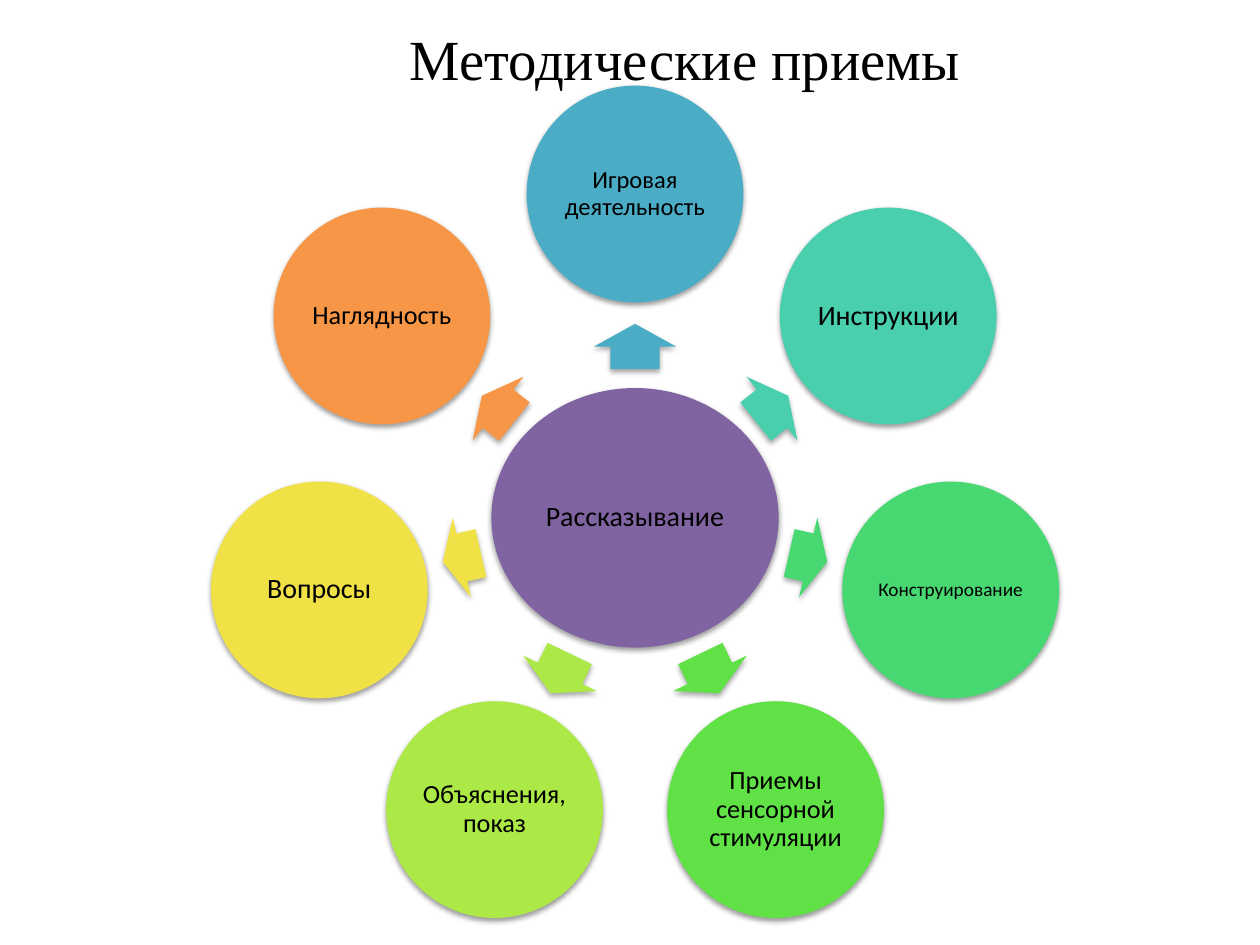
import math

from lxml import etree
from pptx import Presentation
from pptx.dml.color import RGBColor
from pptx.enum.shapes import MSO_SHAPE
from pptx.enum.text import MSO_ANCHOR, PP_ALIGN
from pptx.oxml.ns import qn
from pptx.util import Inches, Pt

OVAL = MSO_SHAPE.OVAL
ARROW = MSO_SHAPE.RIGHT_ARROW
CENTER = PP_ALIGN.CENTER
MIDDLE = MSO_ANCHOR.MIDDLE

COLORS = {
    "text": "000000", "hub": "8064A2", "blue": "4BACC6", "teal": "49CFAE",
    "emerald": "47D872", "green": "60E146", "lime": "ACE946",
    "yellow": "F0E146", "orange": "F79646",
}

# Ring geometry in inches
CX, CY = 5.04, 4.11
RING_RADIUS = 2.57
CIRCLE_SIZE = 1.72
ARROW_WIDTH = 0.65

# Text, size, colour; clockwise from the top
METHODS = [
    ("Игровая деятельность", 14, "blue"),
    ("Инструкции", 16, "teal"),
    ("Конструирование", 11, "emerald"),
    ("Приемы сенсорной стимуляции", 15, "green"),
    ("Объяснения, показ", 15, "lime"),
    ("Вопросы", 16, "yellow"),
    ("Наглядность", 15, "orange"),
]
# Distance from the centre and length, by steps away from the top
ARROWS = [(1.36, 0.36), (1.39, 0.33), (1.41, 0.31), (1.37, 0.35)]


def set_text(sp, text, size, font="Calibri", color="text", inset=0.02, spacing=0.9):
    tf = sp.text_frame
    tf.word_wrap = True
    tf.vertical_anchor = MIDDLE
    tf.margin_left = tf.margin_right = Inches(inset)
    tf.margin_top = tf.margin_bottom = Inches(inset)
    p = tf.paragraphs[0]
    p.alignment = CENTER
    p.line_spacing = spacing
    r = p.add_run()
    r.text = text
    r.font.size = Pt(size)
    r.font.name = font
    r.font.color.rgb = RGBColor.from_string(COLORS[color])


def add_shadow(sp, distance, opacity):
    sp.shadow.inherit = False
    effects = sp._element.spPr.find(qn("a:effectLst"))
    shadow = etree.SubElement(
        effects, qn("a:outerShdw"), blurRad=str(Pt(3.1)), dist=str(Pt(distance)),
        dir="5400000", rotWithShape="0")
    color = etree.SubElement(shadow, qn("a:srgbClr"), val="000000")
    etree.SubElement(color, qn("a:alpha"), val=str(opacity * 1000))


def add_shape(slide, kind, cx, cy, width, height, color, distance=1.6, opacity=38):
    """Add a filled shape centred on (cx, cy)."""
    sp = slide.shapes.add_shape(
        kind, Inches(cx - width / 2), Inches(cy - height / 2),
        Inches(width), Inches(height))
    sp.fill.solid()
    sp.fill.fore_color.rgb = RGBColor.from_string(COLORS[color])
    sp.line.fill.background()
    add_shadow(sp, distance, opacity)
    return sp


def add_arrow(slide, cx, cy, length, angle, color):
    sp = add_shape(slide, ARROW, cx, cy, length, ARROW_WIDTH, color, 1.8, 35)
    sp.adjustments[0] = 0.6
    sp.adjustments[1] = 0.5
    sp.rotation = angle


def ring_point(angle, radius):
    a = math.radians(angle)
    return CX + radius * math.cos(a), CY + radius * math.sin(a)


def main():
    prs = Presentation()
    prs.slide_width, prs.slide_height = Inches(10), Inches(7.5)
    slide = prs.slides.add_slide(prs.slide_layouts[6])

    # Title
    title = slide.shapes.add_textbox(Inches(2.09), Inches(0.24), Inches(6.69), Inches(0.44))
    set_text(title, "Методические приемы", 32.4, font="Times New Roman", inset=0, spacing=1)

    # Hub
    hub = add_shape(slide, OVAL, CX, CY, 2.28, 2.06, "hub")
    set_text(hub, "Рассказывание", 16)

    # Ring of methods, each with an arrow from the hub
    count = len(METHODS)
    for i, (text, size, color) in enumerate(METHODS):
        angle = (270 + i * 360 / count) % 360
        radius, length = ARROWS[min(i, count - i)]
        add_arrow(slide, *ring_point(angle, radius), length, angle, color)
        circle = add_shape(slide, OVAL, *ring_point(angle, RING_RADIUS),
                           CIRCLE_SIZE, CIRCLE_SIZE, color)
        set_text(circle, text, size)

    prs.save("out.pptx")


if __name__ == "__main__":
    main()
